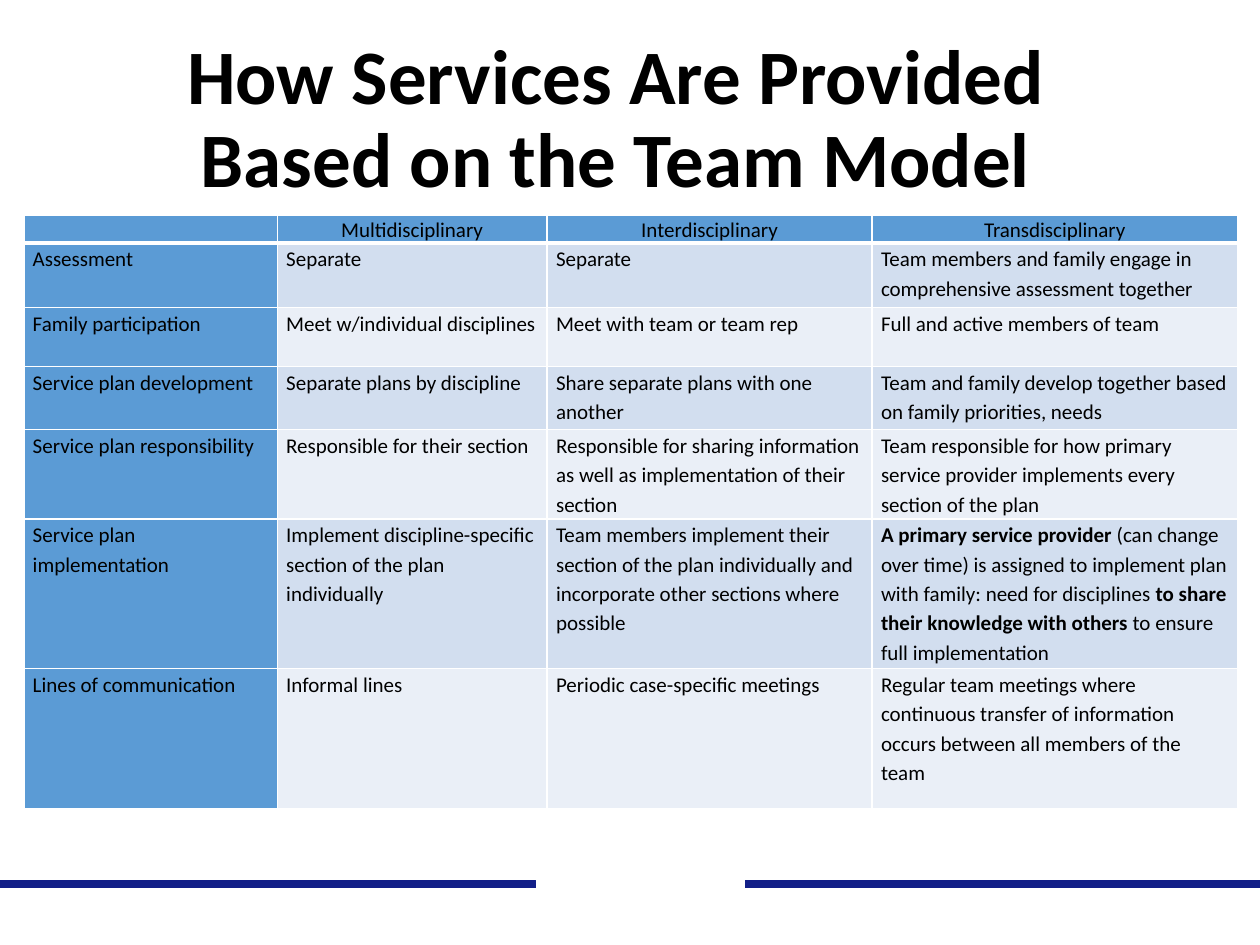
import pptx
import pptx.enum.text
import pptx.oxml
import pptx.util
from dataclasses import dataclass
from lxml import etree
from pptx.dml.color import RGBColor
from pptx.enum.shapes import MSO_CONNECTOR
from pptx.oxml.ns import nsdecls
from pptx.util import Cm, Pt


@dataclass(frozen=True)
class Theme:
    font: str = "Calibri"
    title_size: float = 44
    table_size: float = 12
    rule_width: float = 4.5
    ink: str = "000000"
    white: str = "FFFFFF"
    navy: str = "121F88"
    heading: str = "5B9BD5"
    bands: tuple = ("EAEFF7", "D2DEEF")


theme = Theme()


def write(para, text, size, bold=False, **layout):
    """Fill a paragraph; parts between ** marks are bold."""
    for name, value in layout.items():
        setattr(para, name, value)
    for part_number, part in enumerate(text.split("**")):
        if not part:
            continue
        span = para.add_run()
        span.text = part
        style = {"name": theme.font, "size": Pt(size), "bold": bold or part_number % 2 == 1}
        for name, value in style.items():
            setattr(span.font, name, value)
        span.font.color.rgb = RGBColor.from_string(theme.ink)


def add_border(cell, side, width):
    cell._tc.get_or_add_tcPr().append(pptx.oxml.parse_xml(
        f'<a:ln{side} {nsdecls("a")} w="{Pt(width)}"><a:solidFill>'
        f'<a:srgbClr val="{theme.white}"/></a:solidFill></a:ln{side}>'))


deck = pptx.Presentation()
deck.slide_width, deck.slide_height = Cm(25.4), Cm(19.05)
page = deck.slides.add_slide(deck.slide_layouts[6])

# Footer rule with a gap in the middle
rule_y = Cm(17.83)
for start, end, color in [(0, 25.4, theme.navy), (10.8, 15.01, theme.white)]:
    rule = page.shapes.add_connector(MSO_CONNECTOR.STRAIGHT, Cm(start), rule_y, Cm(end), rule_y)
    rule.line.color.rgb = RGBColor.from_string(color)
    rule.line.width = Pt(theme.rule_width)
    etree.SubElement(rule._element.spPr, pptx.oxml.ns.qn("a:effectLst"))

# Title
title = page.shapes.add_textbox(Cm(1.47), Cm(0.56), Cm(21.9), Cm(3.68))
title.text_frame.word_wrap = True
title.text_frame.vertical_anchor = pptx.enum.text.MSO_ANCHOR.BOTTOM
write(title.text_frame.paragraphs[0], "How Services Are Provided Based on the Team Model",
      theme.title_size, bold=True, alignment=pptx.enum.text.PP_ALIGN.CENTER, line_spacing=0.9)

# Comparison table
team_models = [
    ["", "Multidisciplinary", "Interdisciplinary", "Transdisciplinary"],
    ["Assessment", "Separate", "Separate",
     "Team members and family engage in comprehensive assessment together"],
    ["Family participation", "Meet w/individual disciplines", "Meet with team or team rep",
     "Full and active members of team"],
    ["Service plan development", "Separate plans by discipline",
     "Share separate plans with one another",
     "Team and family develop together based on family priorities, needs"],
    ["Service plan responsibility", "Responsible for their section",
     "Responsible for sharing information as well as implementation of their section",
     "Team responsible for how primary service provider implements every section of the plan"],
    ["Service plan implementation",
     "Implement discipline-specific section of the plan individually",
     "Team members implement their section of the plan individually and incorporate "
     "other sections where possible",
     "**A primary service provider **(can change over time) is assigned to implement plan "
     "with family: need for disciplines **to share their knowledge with others **"
     "to ensure full implementation"],
    ["Lines of communication", "Informal lines", "Periodic case-specific meetings",
     "Regular team meetings where continuous transfer of information occurs between "
     "all members of the team"],
]
column_widths = [5.11, 5.44, 6.55, 7.37]
row_heights = [0.56, 1.3, 1.19, 1.27, 1.8, 3.02, 2.82]
cell_margins = {"margin_left": Cm(0.18), "margin_right": Cm(0.18),
                "margin_top": 0, "margin_bottom": 0}

table = page.shapes.add_table(len(row_heights), len(column_widths), Cm(0.48), Cm(4.34),
                              Cm(sum(column_widths)), Cm(sum(row_heights))).table
table.first_row = table.horz_banding = False
for column, width in zip(table.columns, column_widths):
    column.width = Cm(width)
for row, height in zip(table.rows, row_heights):
    row.height = Cm(height)

for row_number, texts in enumerate(team_models):
    is_header = row_number == 0
    for column_number, text in enumerate(texts):
        cell = table.cell(row_number, column_number)
        for name, value in cell_margins.items():
            setattr(cell, name, value)
        for side in "LRTB":
            add_border(cell, side, 3 if is_header and side == "B" else 1)
        is_heading = is_header or column_number == 0
        cell.fill.solid()
        cell.fill.fore_color.rgb = RGBColor.from_string(
            theme.heading if is_heading else theme.bands[row_number % 2])
        para = cell.text_frame.paragraphs[0]
        if is_header:
            write(para, text, theme.table_size, line_spacing=1.07,
                  alignment=pptx.enum.text.PP_ALIGN.CENTER)
        else:
            write(para, text, theme.table_size, line_spacing=1.15)
        if not text:  # an empty cell needs its own type size to keep the row low
            etree.SubElement(para._p, pptx.oxml.ns.qn("a:endParaRPr"),
                             sz=str(theme.table_size * 100))

deck.save("out.pptx")
